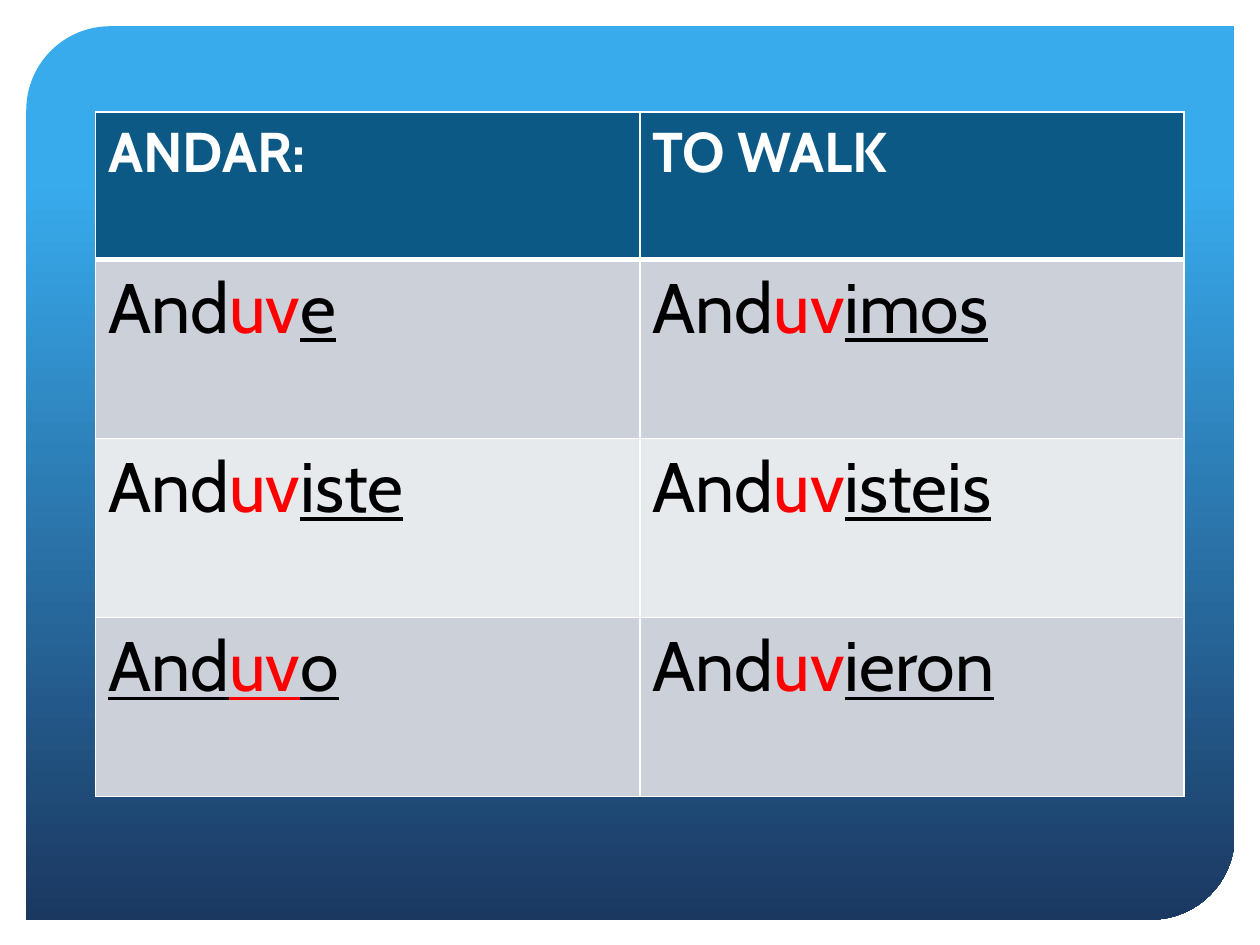
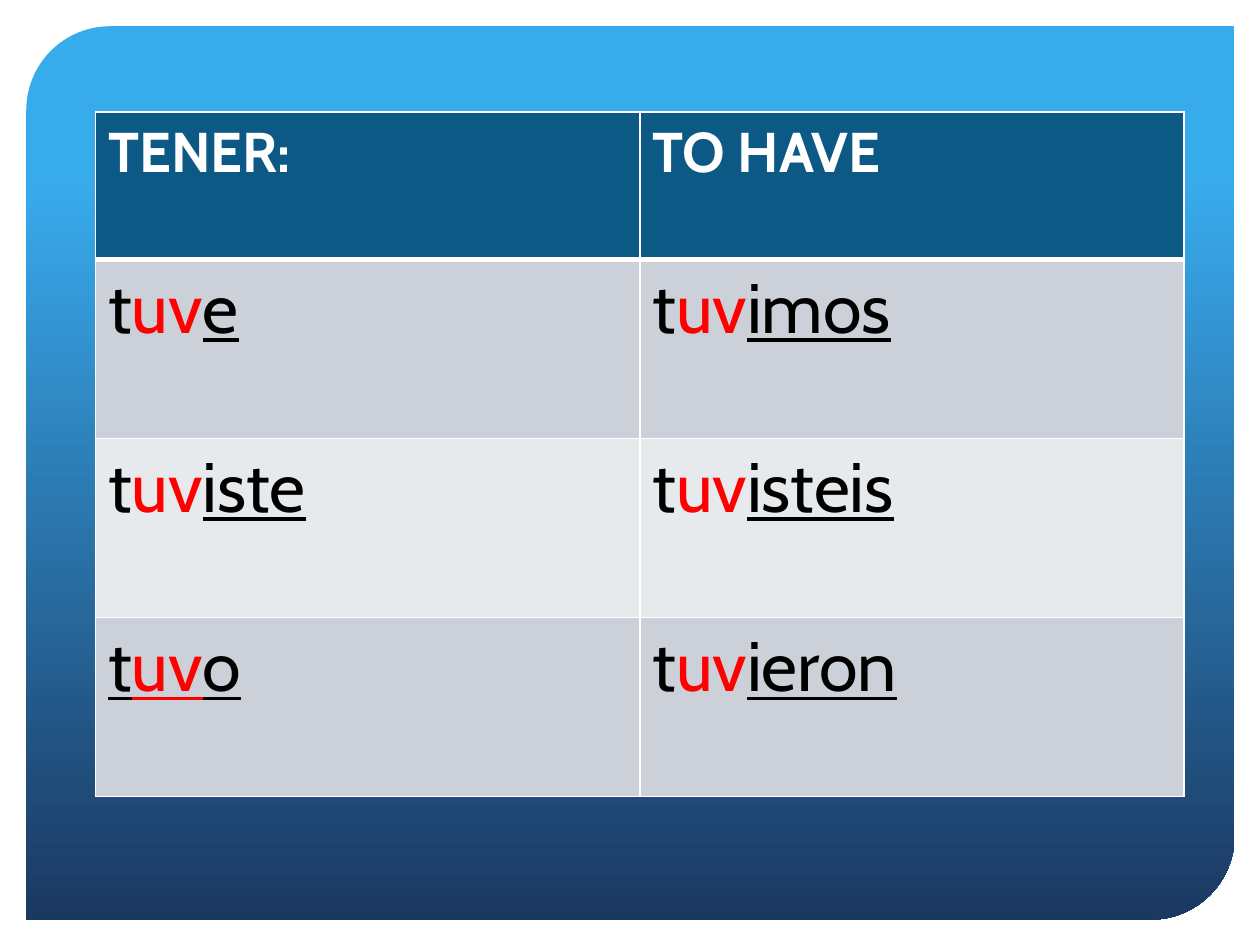
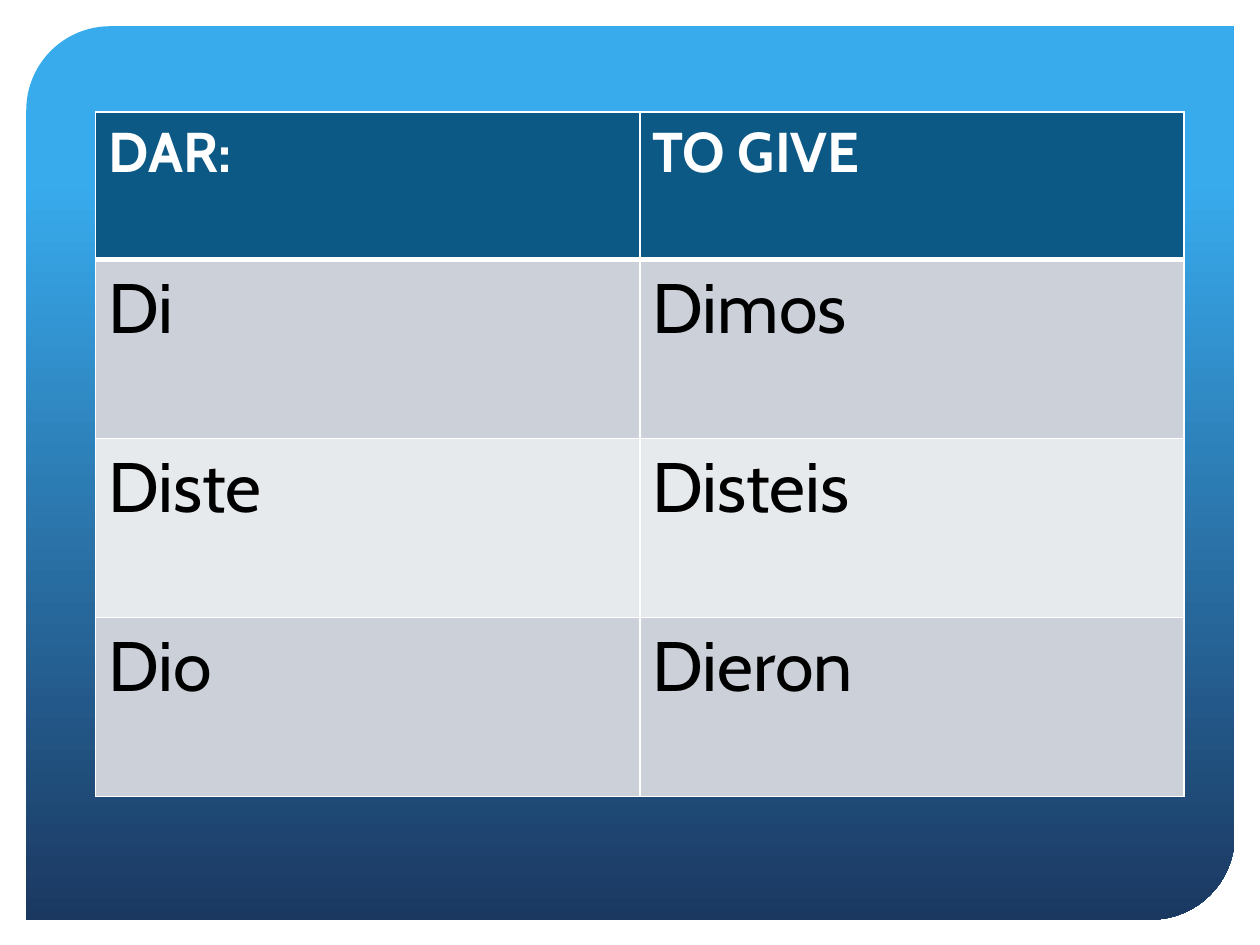
from pptx import Presentation
from pptx.dml.color import RGBColor
from pptx.enum.shapes import MSO_SHAPE as SHAPE
from pptx.oxml.ns import qn
from pptx.util import Cm, Pt
from lxml.etree import SubElement

WHITE = RGBColor(0xFF, 0xFF, 0xFF)
BLACK = RGBColor(0x00, 0x00, 0x00)
RED = RGBColor(0xFF, 0x00, 0x00)
SKY = RGBColor(0x38, 0xAB, 0xED)
NAVY = RGBColor(0x1B, 0x38, 0x61)
HEADER = RGBColor(0x0C, 0x59, 0x86)
ROW_FILLS = (RGBColor(0xCC, 0xD1, 0xD9), RGBColor(0xE7, 0xEA, 0xED))

HEAD_FONT = {"name": "Cabin", "size": Pt(32), "bold": True}
BODY_FONT = {"name": "Cabin", "size": Pt(40), "bold": False}

UV_ENDINGS = (("e", "imos"), ("iste", "isteis"), ("o", "ieron"))
DAR_ENDINGS = (("", "mos"), ("ste", "steis"), ("o", "eron"))
# infinitive, meaning, stem, irregular letters, endings
VERBS = (
    ("ANDAR:", "TO WALK", "And", "uv", UV_ENDINGS),
    ("TENER:", "TO HAVE", "t", "uv", UV_ENDINGS),
    ("DAR:", "TO GIVE", "Di", "", DAR_ENDINGS),
)


def conjugate(stem, mark, ending):
    """Return the runs of one verb form as (text, colour, underline)."""
    if not mark:
        return [(stem + ending, BLACK, False)]
    whole = ending == "o"
    return [(stem, BLACK, whole), (mark, RED, whole), (ending, BLACK, True)]


class Deck:
    def __init__(self):
        self.prs = Presentation()
        self.prs.slide_width, self.prs.slide_height = Cm(25.4), Cm(19.05)

    def add_slide(self):
        self.s = self.prs.slides.add_slide(self.prs.slide_layouts[6])
        self.panel()

    def panel(self):
        """Draw the gradient panel with two rounded corners."""
        sp = self.s.shapes.add_shape(SHAPE.ROUND_2_DIAG_RECTANGLE,
                                     Cm(0.53), Cm(0.53), Cm(24.36), Cm(18.01))
        sp.adjustments[0], sp.adjustments[1] = 0.094, 0
        sp.shadow.inherit = False
        sp.line.fill.background()
        sp.fill.gradient()
        sp.fill.gradient_angle = 270
        stops = ((0.17, SKY), (1, NAVY))
        for stop, (position, color) in zip(sp.fill.gradient_stops, stops):
            stop.position, stop.color.rgb = position, color

    def verb_table(self, infinitive, meaning, stem, mark, endings):
        rows = len(endings) + 1
        table = self.s.shapes.add_table(rows, 2, Cm(1.93), Cm(2.26),
                                        Cm(21.94), Cm(13.8)).table
        table.first_row = table.horz_banding = False
        for column in table.columns:
            column.width = Cm(10.97)
        for i, row in enumerate(table.rows):
            row.height = Cm(3.61 if i else 2.97)

        for c, text in enumerate((infinitive, meaning)):
            self.cell(table.cell(0, c), [(text, WHITE, False)],
                      HEAD_FONT, HEADER, bottom=3)
        for i, pair in enumerate(endings):
            for c, ending in enumerate(pair):
                self.cell(table.cell(i + 1, c), conjugate(stem, mark, ending),
                          BODY_FONT, ROW_FILLS[i % 2], top=1 if i else 3)

    def cell(self, cell, runs, font, fill, top=1, bottom=1):
        self.borders(cell, {"L": 1, "R": 1, "T": top, "B": bottom})
        cell.fill.solid()
        cell.fill.fore_color.rgb = fill
        p = cell.text_frame.paragraphs[0]
        for text, color, underline in runs:
            r = p.add_run()
            r.text = text
            for name, value in font.items():
                setattr(r.font, name, value)
            r.font.color.rgb = color
            r.font.underline = underline

    def borders(self, cell, widths):
        tc_pr = cell._tc.get_or_add_tcPr()
        for side, width in widths.items():
            ln = SubElement(tc_pr, qn(f"a:ln{side}"), w=str(Pt(width)))
            solid = SubElement(ln, qn("a:solidFill"))
            SubElement(solid, qn("a:srgbClr"), val=str(WHITE))


def main():
    deck = Deck()
    for verb in VERBS:
        deck.add_slide()
        deck.verb_table(*verb)
    deck.prs.save("out.pptx")


if __name__ == "__main__":
    main()
